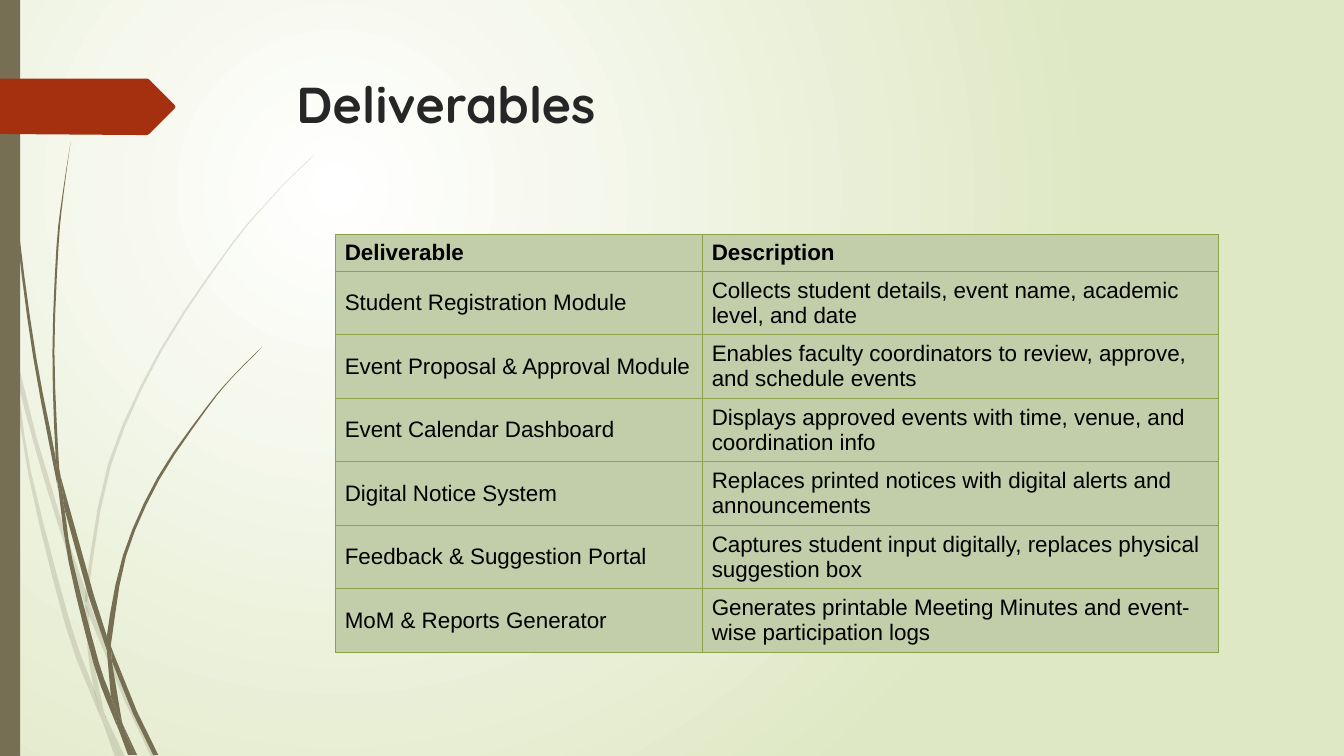
from dataclasses import dataclass
from pptx import Presentation
from pptx.dml.color import RGBColor
from pptx.enum.shapes import MSO_SHAPE
from pptx.enum.text import MSO_ANCHOR
from pptx.oxml.ns import qn
from pptx.util import Inches, Pt
from lxml.etree import SubElement

TITLE = "Deliverables"
ROWS = [
    ("Deliverable", "Description"),
    ("Student Registration Module",
     "Collects student details, event name, academic level, and date"),
    ("Event Proposal & Approval Module",
     "Enables faculty coordinators to review, approve, and schedule events"),
    ("Event Calendar Dashboard",
     "Displays approved events with time, venue, and coordination info"),
    ("Digital Notice System",
     "Replaces printed notices with digital alerts and announcements"),
    ("Feedback & Suggestion Portal",
     "Captures student input digitally, replaces physical suggestion box"),
    ("MoM & Reports Generator",
     "Generates printable Meeting Minutes and event-wise participation logs"),
]
COLS = (3.64, 5.12)
HEAD_H, ROW_H = 0.36, 0.63

# Each piece of grass: its left edge and its right edge, both from the top down
PALE = [
    ([(0, 2.82), (0, 2.99), (0.1, 3.44), (0.11, 3.5)],
     [(0, 2.82), (0.09, 3.22), (0.11, 3.5)]),
    ([(0.14, 3.45), (0.17, 3.76), (0.36, 4.49), (0.58, 5.22), (0.84, 5.99)],
     [(0.14, 3.45), (0.36, 4.33), (0.62, 5.2), (0.85, 5.86)]),
    ([(0.88, 5.96), (0.88, 6.1), (1.23, 6.94), (1.5, 7.51)],
     [(0.88, 5.96), (0.92, 6.07), (1.27, 6.92), (1.55, 7.51)]),
    ([(1.05, 7.11), (1.19, 7.51)], [(1.05, 7.11), (1.24, 7.51)]),
    ([(0.11, 3.5), (0.28, 4.7), (0.65, 6.21), (0.92, 6.93), (1.01, 7.14)],
     [(0.11, 3.5), (0.17, 3.76), (0.31, 4.69), (0.7, 6.19), (0.93, 6.83),
      (0.99, 7.07), (1.01, 7.14)]),
    ([(0.84, 5.99), (0.87, 6.46), (0.93, 6.83), (0.96, 6.92), (1.05, 7.11)],
     [(0.84, 5.99), (0.88, 6.08), (0.91, 6.46), (1.03, 7.06), (1.05, 7.11)]),
    ([(3.12, 1.53), (2.89, 1.75), (2.68, 1.97), (2.28, 2.44), (1.58, 3.48),
      (1.07, 4.61), (0.85, 5.84), (0.88, 5.96)],
     [(3.12, 1.54), (2.9, 1.75), (2.68, 1.98), (2.29, 2.45), (1.6, 3.49),
      (1.1, 4.62), (0.88, 5.84), (0.88, 5.96)]),
    ([(1.01, 7.14), (1.14, 7.51)], [(1.01, 7.14), (1.19, 7.51)]),
    ([(0.85, 5.86), (0.84, 5.99), (0.88, 6.1)],
     [(0.85, 5.86), (0.88, 5.96), (0.88, 6.1)]),
    ([(0.93, 6.83), (0.99, 7.07), (1.01, 7.14), (1.19, 7.51)],
     [(0.93, 6.83), (0.96, 6.92), (1.05, 7.11), (1.19, 7.51)]),
]
DARK = [
    ([(0.03, 0), (0.04, 0.48), (0.07, 1.1), (0.17, 2.33), (0.33, 3.55),
      (0.56, 4.77), (0.57, 4.81)],
     [(0.04, 0), (0.05, 0.48), (0.08, 1.09), (0.19, 2.32), (0.36, 3.55),
      (0.55, 4.53), (0.57, 4.81)]),
    ([(0.6, 4.72), (0.64, 5.05), (0.88, 5.92), (1.06, 6.45)],
     [(0.6, 4.72), (0.93, 5.9), (1.06, 6.31)]),
    ([(1.1, 6.41), (1.11, 6.56), (1.32, 7.08), (1.52, 7.49)],
     [(1.1, 6.41), (1.13, 6.49), (1.36, 7.06), (1.57, 7.49)]),
    ([(0.57, 4.77), (0.68, 5.57), (0.93, 6.59), (1.11, 7.08), (1.17, 7.22)],
     [(0.57, 4.77), (0.64, 5.05), (0.72, 5.56), (0.98, 6.57), (1.1, 6.91),
      (1.17, 7.22)]),
    ([(0.7, 1.41), (0.62, 1.93), (0.56, 2.45), (0.52, 3.49), (0.55, 4.49),
      (0.6, 4.72)],
     [(0.7, 1.41), (0.63, 1.93), (0.58, 2.45), (0.54, 3.49), (0.58, 4.53),
      (0.6, 4.72)]),
    ([(1.22, 7.19), (1.33, 7.49)], [(1.22, 7.19), (1.36, 7.49)]),
    ([(0.55, 4.49), (0.57, 4.77), (0.64, 5.05)],
     [(0.55, 4.49), (0.6, 4.72), (0.64, 5.05)]),
    ([(2.6, 3.44), (2.31, 3.73), (2.04, 4.05), (1.56, 4.74), (1.22, 5.51),
      (1.06, 6.31), (1.1, 6.41)],
     [(2.61, 3.44), (2.31, 3.74), (2.05, 4.06), (1.58, 4.76), (1.25, 5.52),
      (1.11, 6.33), (1.1, 6.41)]),
    ([(1.17, 7.22), (1.27, 7.49)], [(1.17, 7.22), (1.31, 7.49)]),
    ([(1.06, 6.45), (1.1, 6.91), (1.16, 7.06), (1.22, 7.19)],
     [(1.06, 6.45), (1.11, 6.56), (1.21, 7.16), (1.22, 7.19)]),
    ([(1.06, 6.31), (1.06, 6.45), (1.11, 6.56)],
     [(1.06, 6.31), (1.1, 6.41), (1.11, 6.56)]),
    ([(1.1, 6.91), (1.16, 7.17), (1.17, 7.22), (1.3, 7.49)],
     [(1.1, 6.91), (1.16, 7.06), (1.22, 7.19), (1.33, 7.49)]),
]
TAG = [(0, 0.78), (1.46, 0.78), (1.48, 0.79), (1.73, 1.04), (1.74, 1.06),
       (1.73, 1.08), (1.48, 1.33), (1.46, 1.34), (1.36, 1.34), (0, 1.33)]


@dataclass
class Theme:
    glow: str = "FFFFFF"
    back: str = "DFE8C4"
    grass: str = "766F54"
    tag: str = "A53010"
    title: str = "262626"
    ink: str = "000000"
    cell: str = "C2CDA9"
    rule: str = "8BA249"
    title_pt: int = 36
    cell_pt: int = 16
    title_font: str = "Quicksand"
    cell_font: str = "Arial"


LOOK = Theme()


def rgb(color):
    return RGBColor.from_string(color)


def paint(shape, color, alpha=None):
    shape.shadow.inherit = False
    shape.line.fill.background()
    shape.fill.solid()
    shape.fill.fore_color.rgb = rgb(color)
    if alpha:
        tone = shape.fill._xPr.find(".//" + qn("a:srgbClr"))
        SubElement(tone, qn("a:alpha"), val=str(alpha * 1000))


def smooth(points):
    """Return points along a Catmull-Rom curve through the given ones."""
    ends = [points[0], *points, points[-1]]
    steps = 3 if len(points) > 4 else 1
    curve = []
    for knots in zip(ends, ends[1:], ends[2:], ends[3:]):
        for t in (step / steps for step in range(steps)):
            curve.append(tuple(
                q + t / 2 * (r - p + t * (2 * p - 5 * q + 4 * r - s
                                          + t * (3 * q - p - 3 * r + s)))
                for p, q, r, s in zip(*knots)))
    return curve + [points[-1]]


def outline(slide, points, color, alpha=None):
    spots = [(Inches(x), Inches(y)) for x, y in points]
    pen = slide.shapes.build_freeform(*spots[0])
    pen.add_line_segments(spots[1:], close=True)
    paint(pen.convert_to_shape(), color, alpha)


def style(frame, font, size, color, bold):
    for run in frame.paragraphs[0].runs:
        run.font.name = font
        run.font.size = Pt(size)
        run.font.bold = bold
        run.font.color.rgb = rgb(color)


def backdrop(slide):
    fill = slide.background.fill
    fill.gradient()
    for place, color in enumerate((LOOK.glow, LOOK.back)):
        stop = fill.gradient_stops[place]
        stop.color.rgb = rgb(color)
        stop.position = place
    grad = slide.element.find(".//" + qn("a:gradFill"))
    grad.remove(grad.find(qn("a:lin")))
    ring = SubElement(grad, qn("a:path"), path="circle")
    SubElement(ring, qn("a:fillToRect"),
               l="50000", t="50000", r="100000", b="100000")


def border(cell):
    """Rule all four sides, placed ahead of the cell's fill."""
    props = cell._tc.get_or_add_tcPr()
    for spot, side in enumerate(("lnL", "lnR", "lnT", "lnB")):
        line = SubElement(props, qn("a:" + side), w=str(Pt(0.75)))
        SubElement(SubElement(line, qn("a:solidFill")),
                   qn("a:srgbClr"), val=LOOK.rule)
        props.insert(spot, line)


def add_grid(slide):
    heights = [HEAD_H] + [ROW_H] * (len(ROWS) - 1)
    table = slide.shapes.add_table(
        len(ROWS), len(COLS), Inches(3.33), Inches(2.33),
        Inches(sum(COLS)), Inches(sum(heights))).table
    table.first_row = table.horz_banding = False
    for col, width in zip(table.columns, COLS):
        col.width = Inches(width)
    for i, (row, height) in enumerate(zip(table.rows, heights)):
        row.height = Inches(height)
        for cell, text in zip(row.cells, ROWS[i]):
            cell.text_frame.text = text
            cell.vertical_anchor = MSO_ANCHOR.MIDDLE
            cell.margin_left = cell.margin_right = Inches(0.09)
            cell.margin_top = cell.margin_bottom = Inches(0.04)
            cell.fill.solid()
            cell.fill.fore_color.rgb = rgb(LOOK.cell)
            border(cell)
            style(cell.text_frame, LOOK.cell_font, LOOK.cell_pt,
                  LOOK.ink, i == 0)


def main():
    deck = Presentation()
    deck.slide_width, deck.slide_height = Inches(13.33), Inches(7.5)
    slide = deck.slides.add_slide(deck.slide_layouts[6])
    backdrop(slide)
    for blades, alpha in ((PALE, 20), (DARK, None)):
        for left, right in blades:
            outline(slide, smooth(left) + smooth(right)[:0:-1],
                    LOOK.grass, alpha)
    paint(slide.shapes.add_shape(MSO_SHAPE.RECTANGLE, 0, 0, Inches(0.2),
                                 deck.slide_height), LOOK.grass)
    outline(slide, TAG, LOOK.tag)
    frame = slide.shapes.add_textbox(Inches(2.84), Inches(0.68),
                                     Inches(9.75), Inches(1.4)).text_frame
    frame.word_wrap = True
    frame.text = TITLE
    style(frame, LOOK.title_font, LOOK.title_pt, LOOK.title, True)
    add_grid(slide)
    deck.save("out.pptx")


if __name__ == "__main__":
    main()
